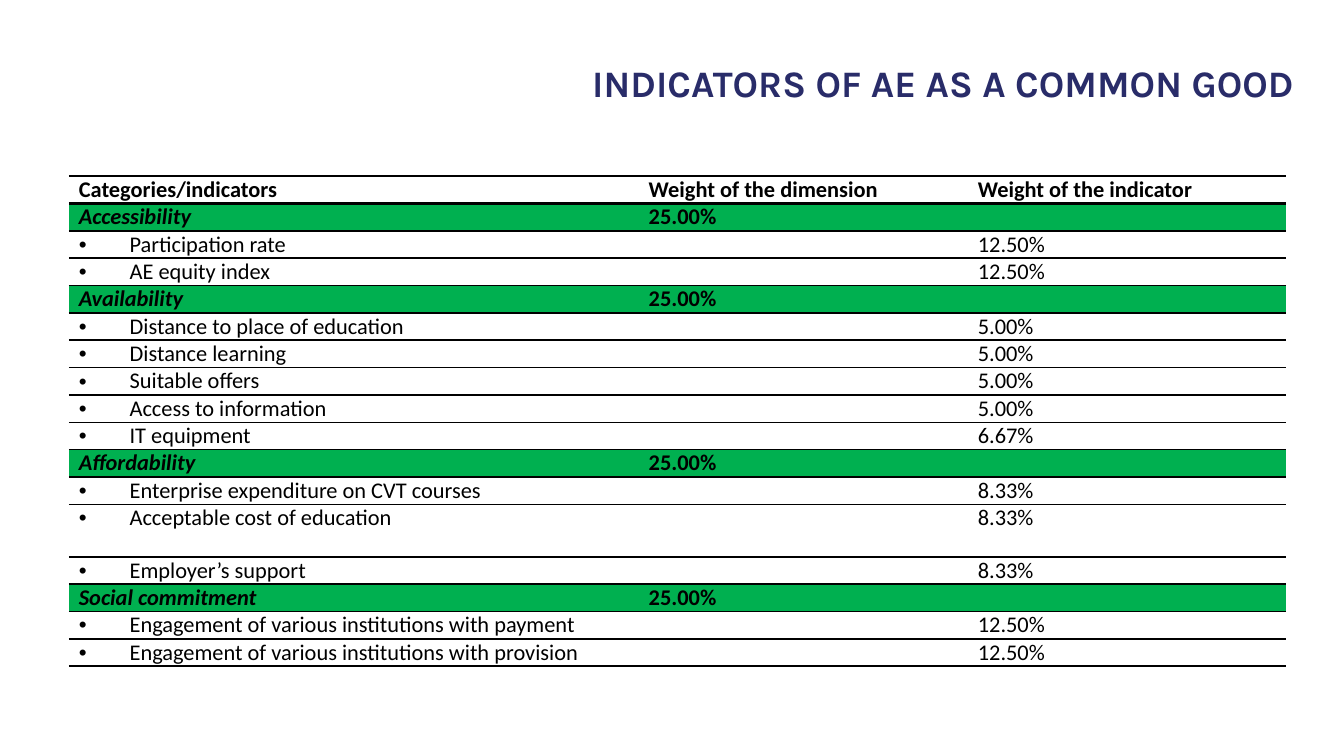
from dataclasses import dataclass

from lxml import etree
from pptx import Presentation
from pptx.dml.color import RGBColor
from pptx.enum.text import MSO_ANCHOR, PP_ALIGN
from pptx.oxml.ns import qn
from pptx.util import Cm, Pt

MIDDLE = MSO_ANCHOR.MIDDLE
RIGHT = PP_ALIGN.RIGHT
NO_STYLE = "{2D5ABB26-0587-4C30-8999-92F81FD0307C}"


@dataclass(frozen=True)
class Theme:
    title_font: str = "Karla"
    title_size: Pt = Pt(20)
    title_color: RGBColor = RGBColor(0x29, 0x2C, 0x69)
    body_font: str = "Calibri"
    body_size: Pt = Pt(12)
    body_color: RGBColor = RGBColor(0, 0, 0)
    category_fill: RGBColor = RGBColor(0x00, 0xB0, 0x50)


theme = Theme()


def add_border(cell, side, width):
    line = etree.SubElement(cell._tc.get_or_add_tcPr(), qn(f"a:{side}"), w=str(width))
    fill = etree.SubElement(line, qn("a:solidFill"))
    etree.SubElement(fill, qn("a:srgbClr"), val=str(theme.body_color))


def add_bullet(para):
    properties = para._p.get_or_add_pPr()
    properties.set("marL", str(Cm(0.96)))
    properties.set("indent", str(-Cm(0.96)))
    etree.SubElement(properties, qn("a:buFont"), typeface="Arial")
    etree.SubElement(properties, qn("a:buChar"), char="•")


# Each category: name, weight of the dimension, its indicators and their weights
headings = ["Categories/indicators", "Weight of the dimension", "Weight of the indicator"]
categories = [
    ("Accessibility", "25.00%", [
        ("Participation rate", "12.50%"),
        ("AE equity index", "12.50%"),
    ]),
    ("Availability", "25.00%", [
        ("Distance to place of education", "5.00%"),
        ("Distance learning", "5.00%"),
        ("Suitable offers", "5.00%"),
        ("Access to information", "5.00%"),
        ("IT equipment", "6.67%"),
    ]),
    ("Affordability", "25.00%", [
        ("Enterprise expenditure on CVT courses", "8.33%"),
        ("Acceptable cost of education", "8.33%"),
        ("Employer’s support", "8.33%"),
    ]),
    ("Social commitment", "25.00%", [
        ("Engagement of various institutions with payment", "12.50%"),
        ("Engagement of various institutions with provision", "12.50%"),
    ]),
]
rows = [("heading", headings)]
for name, weight, indicators in categories:
    rows.append(("category", [name, weight, ""]))
    rows += [("indicator", [label, "", share]) for label, share in indicators]

# Slide
deck = Presentation()
deck.slide_width, deck.slide_height = Cm(25.4), Cm(14.29)
page = deck.slides.add_slide(deck.slide_layouts[5])

# Title
title = page.shapes.title
title.left, title.top, title.width, title.height = Cm(8.71), Cm(0.86), Cm(16), Cm(1.5)
title.text_frame.vertical_anchor = MIDDLE
para = title.text_frame.paragraphs[0]
para.text = "INDICATORS OF AE AS A COMMON GOOD"
para.alignment = RIGHT
para.line_spacing = 0.9
para.font.name = theme.title_font
para.font.size = theme.title_size
para.font.bold = True
para.font.color.rgb = theme.title_color

# Table frame
row_height, tall_height = Cm(0.51), Cm(0.99)
column_widths = [Cm(10.77), Cm(6.22), Cm(6.02)]
table = page.shapes.add_table(
    len(rows), len(column_widths), Cm(1.3), Cm(3.33),
    sum(column_widths), row_height * (len(rows) - 1) + tall_height,
).table
table.first_row = table.horz_banding = False
table._tbl.tblPr.find(qn("a:tableStyleId")).text = NO_STYLE
for column, width in zip(table.columns, column_widths):
    column.width = width

# Table cells
for row_index, (kind, values) in enumerate(rows):
    is_tall = values[0] == "Acceptable cost of education"
    table.rows[row_index].height = tall_height if is_tall else row_height
    for column_index, value in enumerate(values):
        cell = table.cell(row_index, column_index)
        cell.margin_left = cell.margin_right = Cm(0.19)
        cell.margin_top = cell.margin_bottom = 0

        # Heavier rules around the heading row
        add_border(cell, "lnT", Pt(1.5) if row_index < 2 else Pt(1))
        add_border(cell, "lnB", Pt(1.5) if row_index < 1 else Pt(1))
        if kind == "category":
            cell.fill.solid()
            cell.fill.fore_color.rgb = theme.category_fill
        else:
            cell.fill.background()

        para = cell.text_frame.paragraphs[0]
        if kind == "indicator" and column_index == 0:
            add_bullet(para)
        para.font.name = theme.body_font
        para.font.size = theme.body_size
        para.font.color.rgb = theme.body_color
        para.font.bold = kind != "indicator"
        para.font.italic = kind == "category" and column_index == 0
        if value:
            para.add_run().text = value
        else:
            # Keeps an empty cell as low as its row
            size = str(int(theme.body_size.pt * 100))
            etree.SubElement(para._p, qn("a:endParaRPr"), sz=size)

deck.save("out.pptx")
